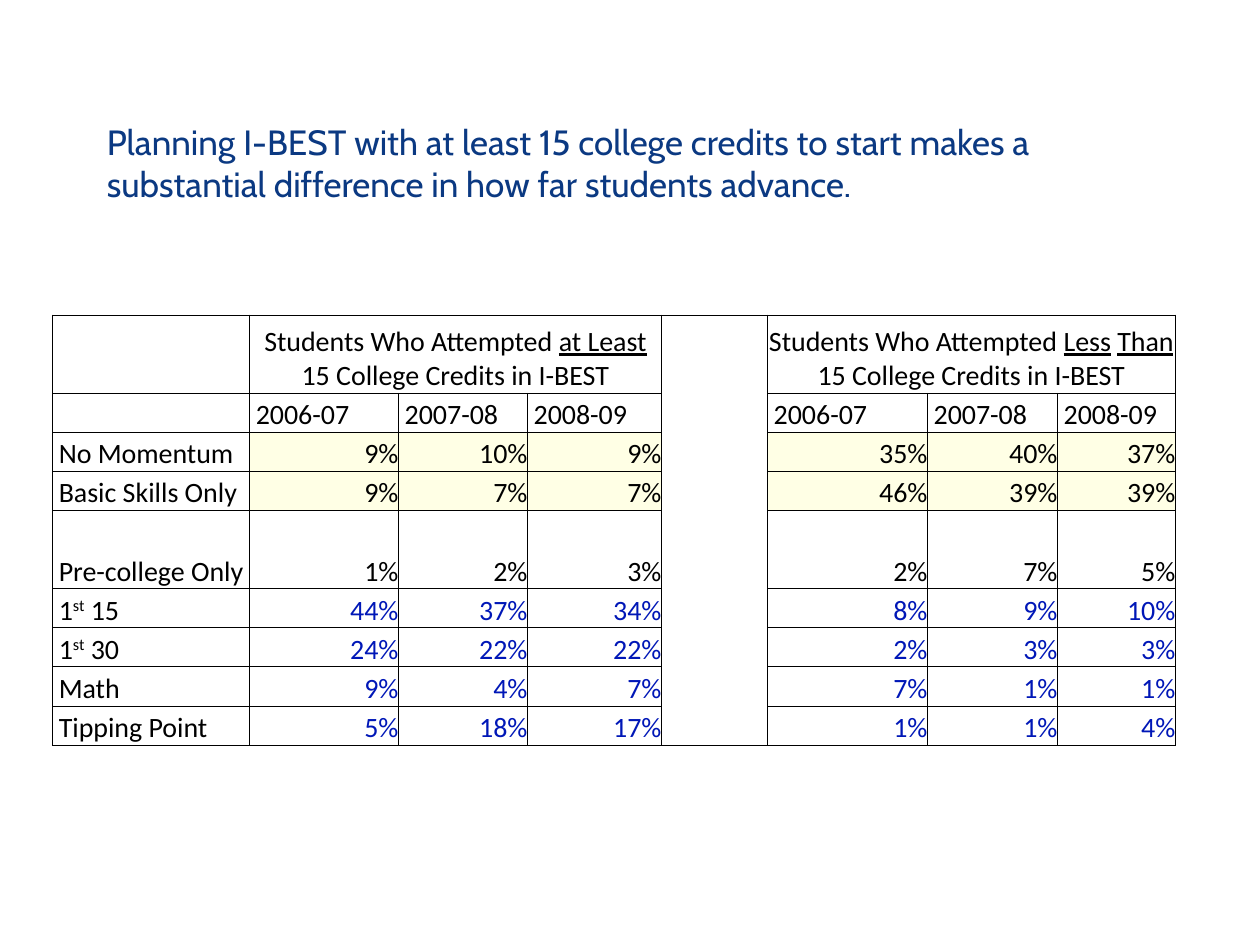
from dataclasses import dataclass, field

from lxml.etree import SubElement
from pptx import Presentation
from pptx.dml.color import RGBColor
from pptx.enum.text import MSO_ANCHOR, PP_ALIGN
from pptx.oxml.ns import qn
from pptx.util import Pt

COLORS = {"title": "0B3982", "text": "000000", "gain": "0017B7",
          "tint": "FFFFCC", "line": "000000"}
SIZE = 16
UNIT = 22.34
WIDTHS = [112.6, 85.1, 73.7, 76.6, 60.6, 91.4, 74.3, 67.4]
LINES = [2, 1, 1, 1, 2, 1, 1, 1, 1]
GAP = 4
STARTS = [1, 5]
YEARS = ["2006-07", "2007-08", "2008-09"]


@dataclass
class Piece:
    text: str
    under: bool = False
    raised: bool = False


@dataclass
class Row:
    label: list[Piece]
    most: list[int]
    less: list[int]
    ink: str = "text"
    tint: bool = False


@dataclass
class Look:
    align: PP_ALIGN = PP_ALIGN.LEFT
    indent: float = 3.6
    ink: str = "text"
    tint: bool = False
    words: list[Piece] = field(default_factory=list)


def first(credits: str) -> list[Piece]:
    return [Piece("1"), Piece("st", raised=True), Piece(f" {credits}")]


HEADS = [
    [Piece("Students Who Attempted "), Piece("at Least", under=True),
     Piece(" 15 College Credits in I-BEST")],
    [Piece("Students Who Attempted "), Piece("Less", under=True), Piece(" "),
     Piece("Than", under=True), Piece(" 15 College Credits in I-BEST")],
]
ROWS = [
    Row([Piece("No Momentum")], [9, 10, 9], [35, 40, 37], tint=True),
    Row([Piece("Basic Skills Only")], [9, 7, 7], [46, 39, 39], tint=True),
    Row([Piece("Pre-college Only")], [1, 2, 3], [2, 7, 5]),
    Row(first("15"), [44, 37, 34], [8, 9, 10], "gain"),
    Row(first("30"), [24, 22, 22], [2, 3, 3], "gain"),
    Row([Piece("Math")], [9, 4, 7], [7, 1, 1], "gain"),
    Row([Piece("Tipping Point")], [5, 18, 17], [1, 1, 4], "gain"),
]


def rgb(name: str) -> RGBColor:
    return RGBColor.from_string(COLORS[name])


def style(font, name: str, size: float, ink: str) -> None:
    for key, value in {"name": name, "size": Pt(size)}.items():
        setattr(font, key, value)
    font.color.rgb = rgb(ink)


def reset(cell) -> None:
    """Give a cell black borders, no fill, no margins and small empty text."""
    props = cell._tc.get_or_add_tcPr()
    for side in ("lnL", "lnR", "lnT", "lnB"):
        line = SubElement(props, qn(f"a:{side}"), w=str(Pt(0.5)))
        fill = SubElement(line, qn("a:solidFill"))
        SubElement(fill, qn("a:srgbClr"), val=COLORS["line"])
    cell.fill.background()
    for side in ("left", "right", "top", "bottom"):
        setattr(cell, f"margin_{side}", Pt(0))
    para = cell.text_frame.paragraphs[0]
    SubElement(para._p, qn("a:endParaRPr"), sz=str(SIZE * 100))


def write(cell, look: Look) -> None:
    cell.vertical_anchor = MSO_ANCHOR.BOTTOM
    cell.margin_left = Pt(look.indent)
    para = cell.text_frame.paragraphs[0]
    para.alignment = look.align
    for piece in look.words:
        run = para.add_run()
        run.text = piece.text
        style(run.font, "Calibri", SIZE, look.ink)
        if piece.under:
            run.font.underline = True
        if piece.raised:
            run.font._element.set("baseline", "30000")
    if look.tint:
        cell.fill.solid()
        cell.fill.fore_color.rgb = rgb("tint")
        color = cell._tc.tcPr.find(f"{qn('a:solidFill')}/{qn('a:srgbClr')}")
        SubElement(color, qn("a:alpha"), val="50000")


def add_title(slide) -> None:
    box = slide.shapes.add_textbox(Pt(54), Pt(48), Pt(612), Pt(90))
    frame = box.text_frame
    frame.word_wrap = True
    frame.vertical_anchor = MSO_ANCHOR.MIDDLE
    run = frame.paragraphs[0].add_run()
    run.text = ("Planning I-BEST with at least 15 college credits to start "
                "makes a substantial difference in how far students advance.")
    style(run.font, "Cabin", 20, "title")


def add_grid(slide) -> None:
    table = slide.shapes.add_table(
        len(LINES), len(WIDTHS), Pt(30), Pt(180),
        Pt(sum(WIDTHS)), Pt(UNIT * sum(LINES))).table
    table.first_row = table.horz_banding = False
    for column, width in zip(table.columns, WIDTHS):
        column.width = Pt(width)
    for row, count in zip(table.rows, LINES):
        row.height = Pt(UNIT * count)
    for cell in table.iter_cells():
        reset(cell)

    table.cell(0, GAP).merge(table.cell(len(LINES) - 1, GAP))
    for start, head in zip(STARTS, HEADS):
        table.cell(0, start).merge(table.cell(0, start + len(YEARS) - 1))
        write(table.cell(0, start), Look(PP_ALIGN.CENTER, 0, words=head))
        for col, year in enumerate(YEARS, start):
            write(table.cell(1, col), Look(words=[Piece(year)]))

    for index, row in enumerate(ROWS, 2):
        write(table.cell(index, 0), Look(words=row.label))
        for start, shares in zip(STARTS, (row.most, row.less)):
            for col, share in enumerate(shares, start):
                write(table.cell(index, col),
                      Look(PP_ALIGN.RIGHT, 0, row.ink, row.tint,
                           [Piece(f"{share}%")]))


def main() -> None:
    deck = Presentation()
    deck.slide_width, deck.slide_height = Pt(720), Pt(540)
    slide = deck.slides.add_slide(deck.slide_layouts[6])
    add_title(slide)
    add_grid(slide)
    deck.save("out.pptx")


if __name__ == "__main__":
    main()
